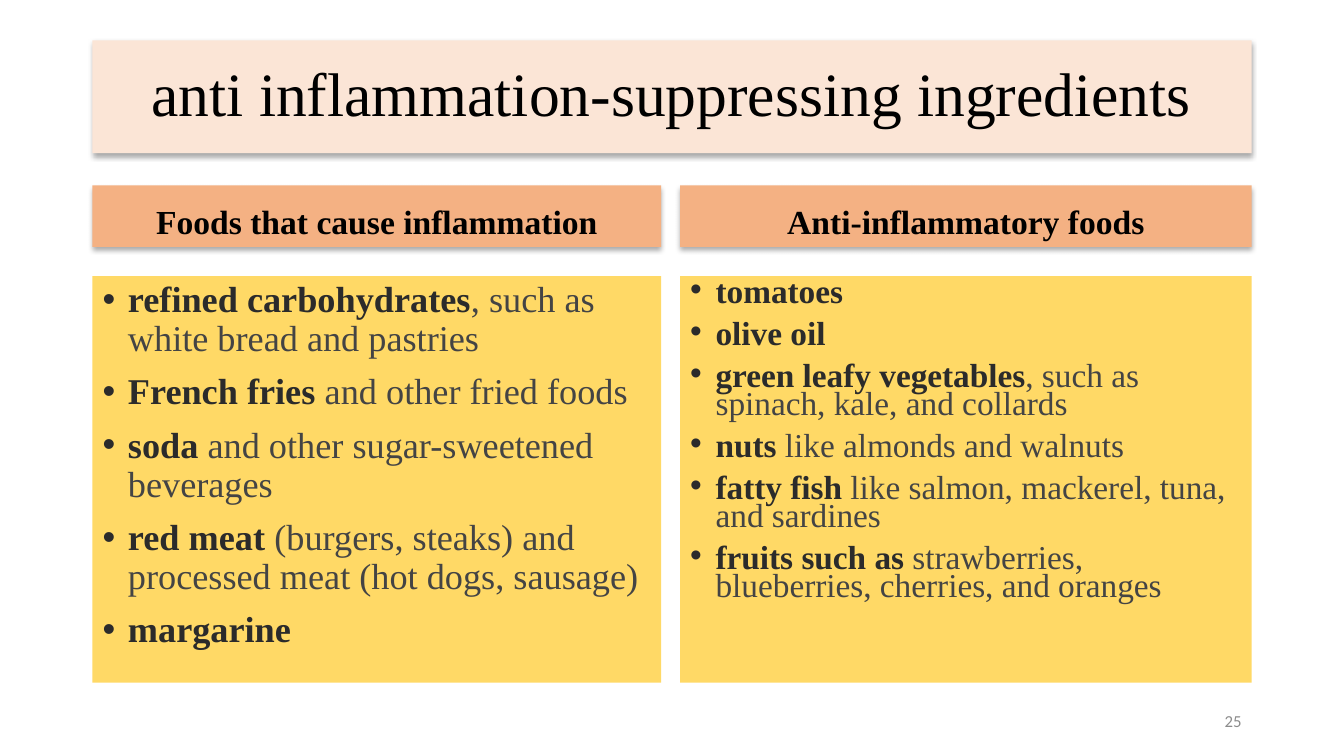
from lxml.etree import SubElement
from pptx import Presentation
from pptx.dml.color import RGBColor
from pptx.enum.text import MSO_ANCHOR, MSO_AUTO_SIZE, PP_ALIGN
from pptx.oxml.ns import qn
from pptx.util import Cm, Pt

TITLE = "anti inflammation-suppressing ingredients"
# Each column: left, width, heading, text size, line spacing, (bold, plain) items
COLUMNS = [
    (2.33, 14.33, "Foods that cause inflammation", 25.9, 0.9, [
        ("refined carbohydrates", ", such as white bread and pastries"),
        ("French fries", " and other fried foods"),
        ("soda", " and other sugar-sweetened beverages"),
        ("red meat", " (burgers, steaks) and processed meat (hot dogs, sausage)"),
        ("margarine", ""),
    ]),
    (17.14, 14.4, "Anti-inflammatory foods", 23.8, 0.7, [
        ("tomatoes", ""),
        ("olive oil", ""),
        ("green leafy vegetables", ", such as spinach, kale, and collards"),
        ("nuts", " like almonds and walnuts"),
        ("fatty fish", " like salmon, mackerel, tuna, and sardines"),
        ("fruits such as", " strawberries, blueberries, cherries, and oranges"),
    ]),
]
NUMBER = "25"

SERIF = "Times New Roman"
BLACK = RGBColor(0x00, 0x00, 0x00)
DARK = RGBColor(0x2B, 0x2B, 0x2B)
GRAY = RGBColor(0x44, 0x44, 0x44)
PALE = RGBColor(0x8C, 0x8C, 0x8C)
CREAM = RGBColor(0xFB, 0xE5, 0xD6)
ORANGE = RGBColor(0xF4, 0xB1, 0x83)
YELLOW = RGBColor(0xFF, 0xD9, 0x66)


def place(shape, left, top, width, height, anchor):
    shape.left, shape.top = Cm(left), Cm(top)
    shape.width, shape.height = Cm(width), Cm(height)
    frame = shape.text_frame
    frame.word_wrap = True
    frame.auto_size = MSO_AUTO_SIZE.NONE
    frame.vertical_anchor = anchor


def paint(shape, color):
    shape.fill.solid()
    shape.fill.fore_color.rgb = color


def shade(shape):
    """Add a soft shadow below the shape."""
    shape.shadow.inherit = False
    effects = shape._element.spPr.find(qn("a:effectLst"))
    outer = SubElement(effects, qn("a:outerShdw"), blurRad=str(Pt(3.5)),
                       dist=str(Pt(2.2)), dir="5400000", rotWithShape="0")
    color = SubElement(outer, qn("a:srgbClr"), val="000000")
    SubElement(color, qn("a:alpha"), val="32000")


def style(run, size, color, bold=False, face=SERIF):
    font = run.font
    font.name, font.size, font.bold = face, Pt(size), bold
    font.color.rgb = color


def banner(shape, text, size, bold, before):
    shape.text_frame.text = text
    par = shape.text_frame.paragraphs[0]
    par.alignment = PP_ALIGN.CENTER
    par.line_spacing, par.space_before = 0.9, Pt(before)
    style(par.runs[0], size, BLACK, bold)
    shade(shape)


def bullet(par):
    props = par._p.get_or_add_pPr()
    props.set("marL", str(Cm(0.64)))
    props.set("indent", str(-Cm(0.64)))
    SubElement(props, qn("a:buFont"), typeface="Arial")
    SubElement(props, qn("a:buChar"), char="•")


def listing(frame, items, size, spacing):
    frame.text = "\n".join(bold for bold, plain in items)
    for par, (bold, plain) in zip(frame.paragraphs, items):
        par.line_spacing, par.space_before = spacing, Pt(10)
        bullet(par)
        style(par.runs[0], size, DARK, True)
        if plain:
            rest = par.add_run()
            rest.text = plain
            style(rest, size, GRAY)


def main():
    deck = Presentation()
    deck.slide_width, deck.slide_height = Cm(33.87), Cm(19.05)
    slide = deck.slides.add_slide(deck.slide_layouts.get_by_name("Comparison"))
    title, *bodies = slide.placeholders

    place(title, 2.33, 1.02, 29.21, 2.84, MSO_ANCHOR.MIDDLE)
    paint(title, CREAM)
    banner(title, TITLE, 44, False, 0)

    pairs = zip(bodies[::2], bodies[1::2])
    for (head, body), column in zip(pairs, COLUMNS):
        left, width, text, size, spacing, items = column
        place(head, left, 4.67, width, 1.55, MSO_ANCHOR.BOTTOM)
        paint(head, ORANGE)
        banner(head, text, 24, True, 10)
        place(body, left, 6.96, width, 10.24, MSO_ANCHOR.TOP)
        paint(body, YELLOW)
        listing(body.text_frame, items, size, spacing)

    number = slide.shapes.add_textbox(0, 0, 0, 0)
    place(number, 23.92, 17.65, 7.62, 1.01, MSO_ANCHOR.MIDDLE)
    number.text_frame.text = NUMBER
    par = number.text_frame.paragraphs[0]
    par.alignment = PP_ALIGN.RIGHT
    style(par.runs[0], 12, PALE, face="Calibri")

    deck.save("out.pptx")


if __name__ == "__main__":
    main()
